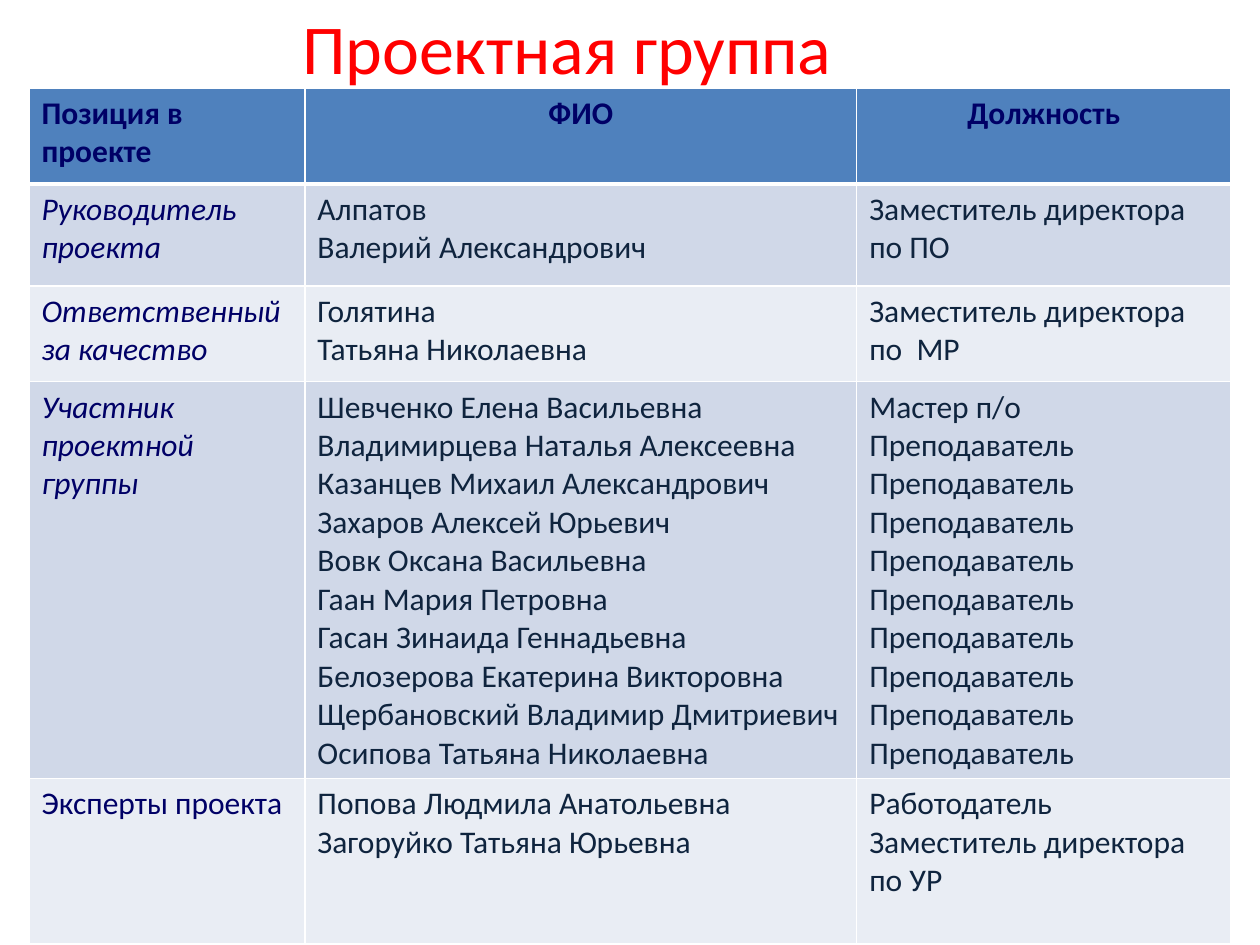
import pptx
import pptx.util
import pptx.dml.color
import pptx.enum.text
from lxml import etree
from pptx.oxml.ns import qn

TITLE = "Проектная группа"
HEADER = ["Позиция в проекте", "ФИО", "Должность"]
ROWS = [
    ("Руководитель проекта",
     ["Алпатов", "Валерий Александрович"],
     ["Заместитель директора", "по ПО"]),
    ("Ответственный за качество",
     ["Голятина", "Татьяна Николаевна"],
     ["Заместитель директора", "по  МР"]),
    ("Участник проектной группы",
     ["Шевченко Елена Васильевна", "Владимирцева Наталья Алексеевна",
      "Казанцев Михаил Александрович", "Захаров Алексей Юрьевич",
      "Вовк Оксана Васильевна", "Гаан Мария Петровна",
      "Гасан Зинаида Геннадьевна", "Белозерова Екатерина Викторовна",
      "Щербановский Владимир Дмитриевич", "Осипова Татьяна Николаевна"],
     ["Мастер п/о"] + ["Преподаватель"] * 9),
    ("Эксперты проекта",
     ["Попова Людмила Анатольевна", "Загоруйко Татьяна Юрьевна"],
     ["Работодатель", "Заместитель директора по УР"]),
]
UPRIGHT_POSITION = "Эксперты проекта"
COL_WIDTHS = [2.19, 4.38, 2.97]
ROW_HEIGHTS = [0.76, 0.81, 0.76, 3.15, 1.31]
LEFT, TOP = 0.23, 0.7
FONT = "Calibri"
RED, NAVY, INK, WHITE = "FF0000", "000066", "0F243E", "FFFFFF"
HEADER_FILL, BANDS = "4F81BD", ["D0D8E8", "E9EDF4"]

inch = pptx.util.Inches
CENTER = pptx.enum.text.PP_ALIGN.CENTER


def rgb(value):
    return pptx.dml.color.RGBColor.from_string(value)


def write(tf, lines, size, color, bold=False, italic=False, align=None):
    """Fill a text frame with one paragraph per line."""
    for i, line in enumerate(lines):
        p = tf.add_paragraph() if i else tf.paragraphs[0]
        p.text = line
        p.alignment = align
        p.font.name, p.font.size = FONT, pptx.util.Pt(size)
        p.font.bold, p.font.italic = bold, italic
        p.font.color.rgb = rgb(color)


def set_borders(cell, top, bottom):
    """Draw white cell borders; top and bottom widths are in points."""
    tc_pr = cell._tc.get_or_add_tcPr()
    for side, width in (("L", 1), ("R", 1), ("T", top), ("B", bottom)):
        ln = etree.SubElement(tc_pr, qn("a:ln" + side), w=str(pptx.util.Pt(width)))
        fill = etree.SubElement(ln, qn("a:solidFill"))
        etree.SubElement(fill, qn("a:srgbClr"), val=WHITE)


def add_title(s):
    box = s.shapes.add_textbox(0, inch(0.01), inch(9), inch(0.72))
    tf = box.text_frame
    tf.word_wrap = True
    tf.vertical_anchor = pptx.enum.text.MSO_ANCHOR.MIDDLE
    write(tf, [TITLE], 40, RED, align=CENTER)


def add_group_table(s):
    table = s.shapes.add_table(
        len(ROW_HEIGHTS), len(COL_WIDTHS), inch(LEFT), inch(TOP),
        inch(sum(COL_WIDTHS)), inch(sum(ROW_HEIGHTS))).table
    for column, width in zip(table.columns, COL_WIDTHS):
        column.width = inch(width)
    for row, height in zip(table.rows, ROW_HEIGHTS):
        row.height = inch(height)

    for c, label in enumerate(HEADER):
        write(table.cell(0, c).text_frame, [label], 18, NAVY, bold=True,
              align=CENTER if c else None)
    for r, (position, names, posts) in enumerate(ROWS, 1):
        write(table.cell(r, 0).text_frame, [position], 18, NAVY,
              italic=position != UPRIGHT_POSITION)
        write(table.cell(r, 1).text_frame, names, 18, INK)
        write(table.cell(r, 2).text_frame, posts, 18, INK)

    for r, row in enumerate(table.rows):
        for cell in row.cells:
            set_borders(cell, top=3 if r == 1 else 1, bottom=1 if r else 3)
            cell.fill.solid()
            cell.fill.fore_color.rgb = rgb(BANDS[(r - 1) % 2] if r else HEADER_FILL)


def main():
    prs = pptx.Presentation()
    prs.slide_width, prs.slide_height = inch(10), inch(7.5)
    s = prs.slides.add_slide(prs.slide_layouts[6])
    add_title(s)
    add_group_table(s)
    prs.save("out.pptx")


if __name__ == "__main__":
    main()
